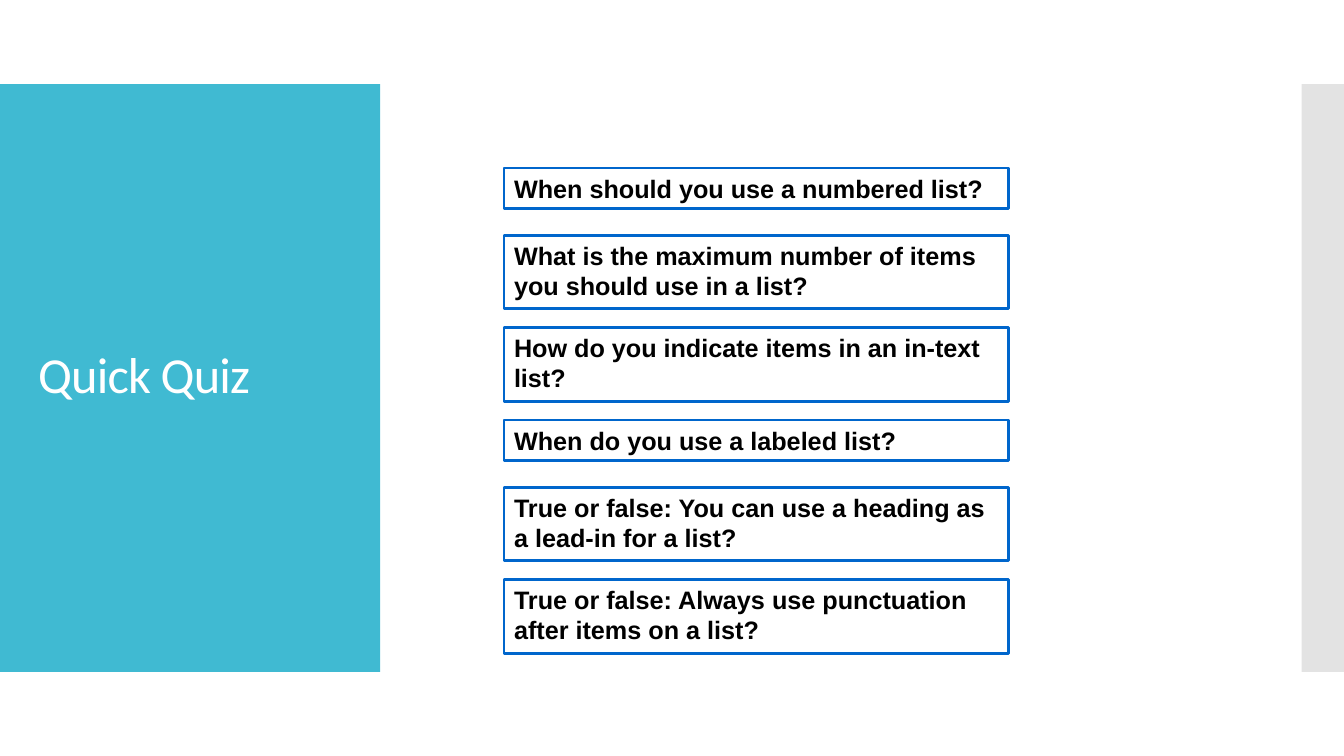
from lxml.etree import SubElement
from pptx import Presentation
from pptx.dml.color import RGBColor
from pptx.enum.shapes import MSO_SHAPE
from pptx.enum.text import MSO_ANCHOR, MSO_AUTO_SIZE, PP_ALIGN
from pptx.oxml.ns import qn
from pptx.util import Inches, Pt

TITLE = "Quick Quiz"
# question, lines it fills
QUIZ = [
    ("When should you use a numbered list?", 1),
    ("What is the maximum number of items you should use in a list?", 2),
    ("How do you indicate items in an in-text list?", 2),
    ("When do you use a labeled list?", 1),
    ("True or false: You can use a heading as a lead-in for a list?", 2),
    ("True or false: Always use punctuation after items on a list?", 2),
]
WIDE, HIGH = 13.33, 7.5
ROW = HIGH / 90                  # a twelfth of an inch
BAND = (10 * ROW, 70 * ROW)      # top and height of the side panels
SIDE, EDGE = 3.77, 0.42          # widths of the side panels
LEFT, SPAN, FIRST = 5, 5, 20     # question column, first row
TALL = {1: 0.4, 2: 0.73}         # box height by line count
STEP = {1: 8, 2: 11}             # rows to the next box by line count
HEAD = {"size": Pt(36), "name": "Calibri"}
ASK = {"size": Pt(18), "name": "Arial", "bold": True}


def tint(code):
    return RGBColor.from_string(code)


def panel(x, y, w, h, fill):
    box = slide.shapes.add_shape(MSO_SHAPE.RECTANGLE, *map(Inches, (x, y, w, h)))
    box.shadow.inherit = False
    box.fill.solid()
    box.fill.fore_color.rgb = tint(fill)
    box.line.fill.background()
    return box


def write(box, text, form, color, anchor):
    frame = box.text_frame
    frame.word_wrap = True
    frame.vertical_anchor = anchor
    para = frame.paragraphs[0]
    para.alignment = PP_ALIGN.LEFT
    run = para.add_run()
    run.text = text
    for key, value in form.items():
        setattr(run.font, key, value)
    run.font.color.rgb = tint(color)
    return para, run


deck = Presentation()
deck.slide_width, deck.slide_height = Inches(WIDE), Inches(HIGH)
slide = deck.slides.add_slide(deck.slide_layouts[6])

panel(0, BAND[0], SIDE, BAND[1], "40BAD2")
strip = panel(WIDE - EDGE, BAND[0], EDGE, BAND[1], "C8C8C8")
shade = strip.fill._xPr.find(qn("a:solidFill"))[0]
SubElement(shade, qn("a:alpha"), val="50000")

title = slide.shapes.add_textbox(*map(Inches, (0.28, 1.23, 3.22, 5.03)))
para, run = write(title, TITLE, HEAD, "FFFFFF", MSO_ANCHOR.MIDDLE)
para.line_spacing = 0.9
run.font._element.set("spc", "-60")

row = FIRST
for text, lines in QUIZ:
    box = panel(LEFT, row * ROW, SPAN, TALL[lines], "FFFFFF")
    box.line.color.rgb = tint("0066CC")
    box.line.width = Pt(2)
    write(box, text, ASK, "000000", MSO_ANCHOR.TOP)
    box.text_frame.auto_size = MSO_AUTO_SIZE.SHAPE_TO_FIT_TEXT
    row += STEP[lines]

deck.save("out.pptx")
